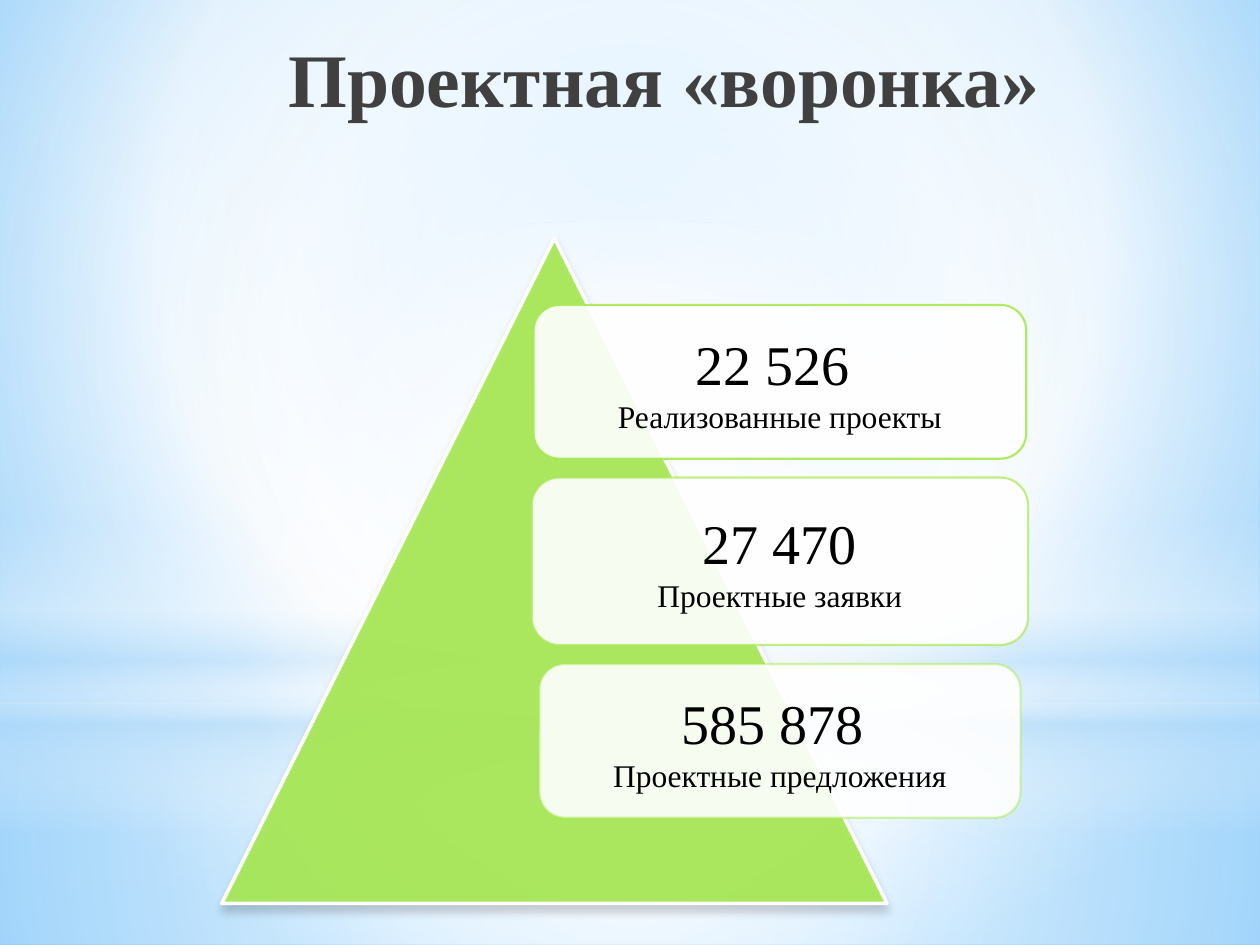
from lxml.etree import SubElement
from pptx import Presentation
from pptx.dml.color import RGBColor
from pptx.enum.shapes import MSO_SHAPE as Preset
from pptx.enum.text import MSO_ANCHOR as Anchor, PP_ALIGN as Align
from pptx.oxml.ns import qn
from pptx.util import Inches, Pt

WIDTH, HEIGHT = 10, 7.5
FONT = "Times New Roman"
WHITE = RGBColor(0xFF, 0xFF, 0xFF)
BLACK = RGBColor(0x00, 0x00, 0x00)
TITLE_GRAY = RGBColor(0x40, 0x40, 0x40)
GREEN = RGBColor(0xA7, 0xEA, 0x52)
PALE_BLUE = RGBColor(0xB4, 0xDC, 0xFA)
SKY_BLUE = RGBColor(0x9E, 0xD5, 0xFF)
DEEP_BLUE = RGBColor(0x5B, 0xB9, 0xFF)

CENTER = (50, 50, 50, 50)
BACKGROUND_STOPS = [(0, SKY_BLUE, 100), (60, WHITE, 100), (100, DEEP_BLUE, 100)]
BACKDROP = [
    (Preset.RECTANGLE, 5.58, 1.92, CENTER,
     [(0, WHITE, 91), (37, WHITE, 76), (100, PALE_BLUE, 79)]),
    (Preset.RECTANGLE, 0, 5.58, CENTER,
     [(0, WHITE, 89), (48, WHITE, 62), (100, PALE_BLUE, 79)]),
    (Preset.RECTANGLE, 4.12, 2.5, None,
     [(0, WHITE, 0), (29, WHITE, 30), (45, PALE_BLUE, 40),
      (55, WHITE, 26), (65, PALE_BLUE, 60), (100, WHITE, 0)]),
    (Preset.OVAL, 1.75, 5.58, CENTER, [(0, WHITE, 100), (56, WHITE, 0)]),
]

CARD_CENTER, CARD_TOP, CARD_GAP = 6.19, 2.42, 0.15
CARDS = [
    ("22 526 ", "Реализованные проекты", 3.91, 1.22, 90),
    ("27 470", "Проектные заявки", 3.94, 1.33, 70),
    ("585 878 ", "Проектные предложения", 3.82, 1.22, 50),
]


def add_element(parent, tag, **attributes):
    """Append a DrawingML child, turning attribute values into strings."""
    values = {name: str(value) for name, value in attributes.items()}
    return SubElement(parent, qn(tag), values)


def add_color(parent, color, opacity):
    """Append an RGB colour with an opacity in percent."""
    element = add_element(parent, "a:srgbClr", val=color)
    add_element(element, "a:alpha", val=opacity * 1000)


def set_gradient(properties, stops, focus=None):
    """Replace an empty fill by a circular gradient, or a vertical one without focus."""
    gradient = add_element(properties, "a:gradFill", rotWithShape=1)
    stop_list = add_element(gradient, "a:gsLst")
    for position, color, opacity in stops:
        add_color(add_element(stop_list, "a:gs", pos=position * 1000), color, opacity)
    if focus:
        circle = add_element(gradient, "a:path", path="circle")
        sides = {side: share * 1000 for side, share in zip("ltrb", focus)}
        add_element(circle, "a:fillToRect", **sides)
    else:
        add_element(gradient, "a:lin", ang=90 * 60000, scaled=0)
    properties.replace(properties.find(qn("a:noFill")), gradient)


def set_opacity(properties, opacity):
    """Give the solid fill of the properties an opacity in percent."""
    color = properties.find(qn("a:solidFill")).find(qn("a:srgbClr"))
    add_element(color, "a:alpha", val=opacity * 1000)


def add_plain_shape(slide, preset, left, top, width, height):
    """Add a preset shape without fill, line or shadow."""
    shape = slide.shapes.add_shape(
        preset, Inches(left), Inches(top), Inches(width), Inches(height))
    shape.shadow.inherit = False
    shape.fill.background()
    shape.line.fill.background()
    return shape


def paint_shape(shape, fill, line, line_width, line_opacity=100):
    """Set a slightly transparent fill and an outline."""
    properties = shape.element.spPr
    shape.fill.solid()
    shape.fill.fore_color.rgb = fill
    set_opacity(properties, 90)
    shape.line.color.rgb = line
    shape.line.width = Pt(line_width)
    set_opacity(properties.find(qn("a:ln")), line_opacity)


def add_text(paragraph, text, size, color, bold=False):
    """Add one centred run."""
    paragraph.alignment = Align.CENTER
    run = paragraph.add_run()
    run.text = text
    run.font.name = FONT
    run.font.size = Pt(size)
    run.font.bold = bold
    run.font.color.rgb = color


def add_backdrop(slide):
    """Fill the background and lay the soft gradient bands over it."""
    slide.background.fill.background()
    properties = next(slide.element.iter(qn("p:bgPr")))
    set_gradient(properties, BACKGROUND_STOPS, (20, 10, 20, 60))
    for preset, top, height, focus, stops in BACKDROP:
        shape = add_plain_shape(slide, preset, 0, top, WIDTH, height)
        set_gradient(shape.element.spPr, stops, focus)


def add_title(slide):
    """Place the title in front of the backdrop."""
    title = slide.shapes.title
    title.element.getparent().append(title.element)
    title.left, title.top = Inches(1.18), Inches(0.17)
    title.width, title.height = Inches(8.18), Inches(0.88)
    title.text_frame.vertical_anchor = Anchor.MIDDLE
    add_text(title.text_frame.paragraphs[0], "Проектная «воронка»", 43.2, TITLE_GRAY, True)


def add_pyramid(slide):
    """Draw the green triangle with its soft shadow."""
    pyramid = add_plain_shape(slide, Preset.ISOSCELES_TRIANGLE, 1.76, 1.89, 5.28, 5.28)
    paint_shape(pyramid, GREEN, WHITE, 2)
    effects = pyramid.element.spPr.find(qn("a:effectLst"))
    shadow = add_element(effects, "a:outerShdw", blurRad=Pt(5), dist=Pt(4),
                         dir=90 * 60000, rotWithShape=0)
    add_color(shadow, BLACK, 20)


def add_card(slide, top, number, label, width, height, line_opacity):
    """Add a rounded card holding a number above its label."""
    card = add_plain_shape(slide, Preset.ROUNDED_RECTANGLE,
                           CARD_CENTER - width / 2, top, width, height)
    paint_shape(card, WHITE, GREEN, 1.25, line_opacity)
    frame = card.text_frame
    frame.word_wrap = True
    frame.vertical_anchor = Anchor.MIDDLE
    frame.margin_left = frame.margin_right = Inches(0.13)
    frame.margin_top = frame.margin_bottom = Inches(0.13)
    add_text(frame.paragraphs[0], number, 32, BLACK)
    add_text(frame.add_paragraph(), label, 18, BLACK)


def main():
    """Build and save the slide."""
    presentation = Presentation()
    presentation.slide_width, presentation.slide_height = Inches(WIDTH), Inches(HEIGHT)
    slide = presentation.slides.add_slide(presentation.slide_layouts[5])
    add_backdrop(slide)
    add_title(slide)
    add_pyramid(slide)
    top = CARD_TOP
    for number, label, width, height, line_opacity in CARDS:
        add_card(slide, top, number, label, width, height, line_opacity)
        top += height + CARD_GAP
    presentation.save("out.pptx")


if __name__ == "__main__":
    main()
